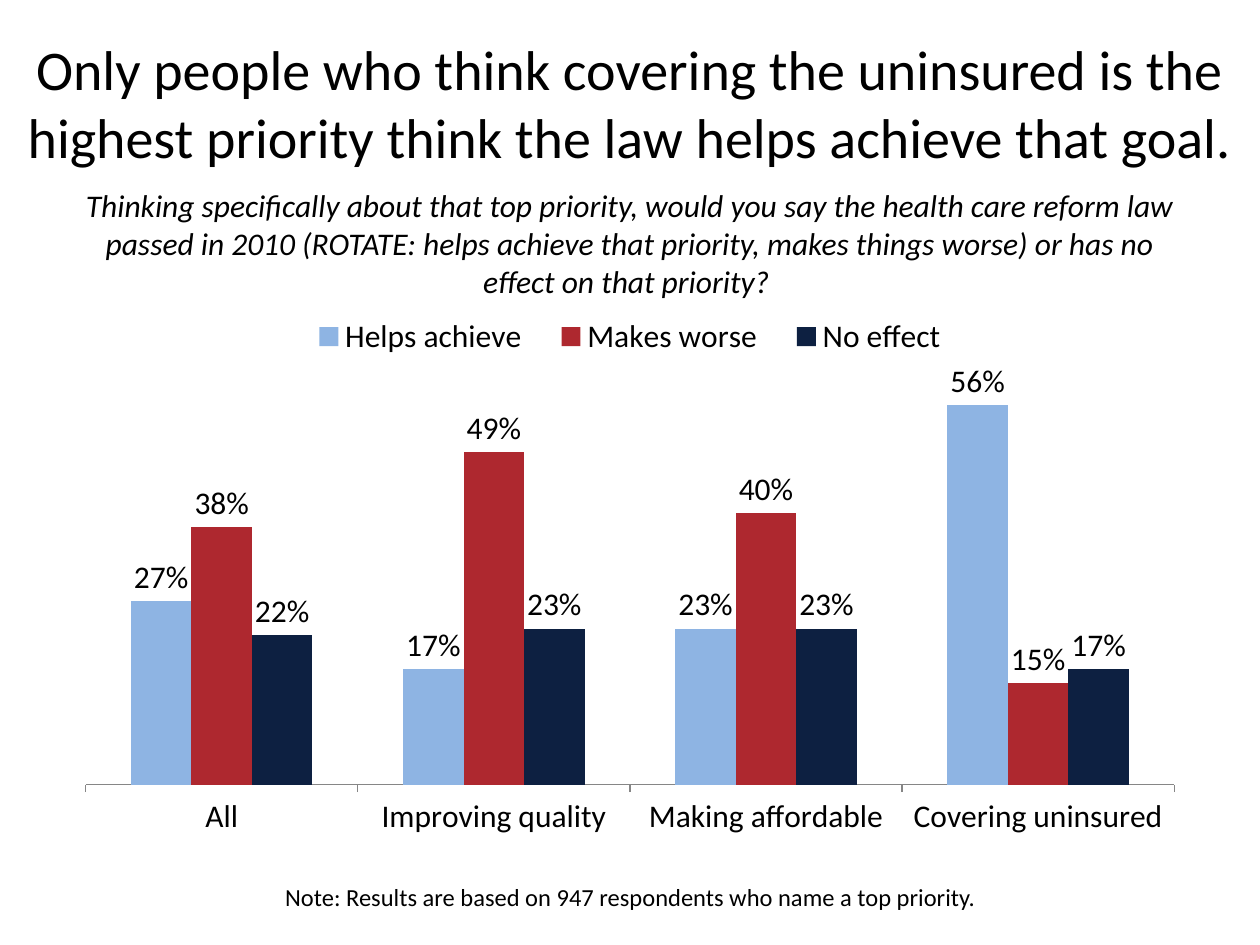
from dataclasses import dataclass

from lxml.etree import SubElement
from pptx import Presentation
from pptx.chart.data import CategoryChartData
from pptx.dml.color import RGBColor
from pptx.enum.chart import XL_CHART_TYPE as ChartType
from pptx.enum.chart import XL_LABEL_POSITION as LabelPosition
from pptx.enum.chart import XL_LEGEND_POSITION as LegendPosition
from pptx.enum.chart import XL_TICK_LABEL_POSITION as TickLabelPosition
from pptx.enum.chart import XL_TICK_MARK as TickMark
from pptx.enum.text import MSO_ANCHOR as Anchor
from pptx.enum.text import PP_ALIGN as Align
from pptx.oxml.ns import qn
from pptx.util import Inches, Pt

FONT = "Calibri"
BLACK = RGBColor(0x00, 0x00, 0x00)
GRAY = RGBColor(0x86, 0x86, 0x86)
LIGHT_BLUE = RGBColor(0x8E, 0xB4, 0xE3)
RED = RGBColor(0xAE, 0x28, 0x2F)
NAVY = RGBColor(0x0D, 0x20, 0x41)


@dataclass
class Caption:
    text: str
    left: float
    top: float
    width: float
    height: float
    size: int
    italic: bool = False
    wrap: bool = True
    anchor: Anchor = Anchor.TOP


@dataclass
class Answer:
    name: str
    color: RGBColor
    shares: tuple[float, ...]


CAPTIONS = [
    Caption("Thinking specifically about that top priority, would you say the "
            "health care reform law passed in 2010 (ROTATE: helps achieve that "
            "priority, makes things worse) or has no effect on that priority? ",
            0.5, 1.43, 9, 1.01, 18, italic=True),
    Caption("Only people who think covering the uninsured is the highest "
            "priority think the law helps achieve that goal.",
            0, 0, 10, 1.62, 32, anchor=Anchor.MIDDLE),
    Caption("Note: Results are based on 947 respondents who name a top priority.",
            2.15, 6.95, 5.71, 0.34, 14, wrap=False),
]
PRIORITIES = ["All", "Improving quality", "Making affordable", "Covering uninsured"]
ANSWERS = [
    Answer("Helps achieve", LIGHT_BLUE, (0.27, 0.17, 0.23, 0.56)),
    Answer("Makes worse", RED, (0.38, 0.49, 0.40, 0.15)),
    Answer("No effect", NAVY, (0.22, 0.23, 0.23, 0.17)),
]


def add_caption(page, caption: Caption) -> None:
    box = page.shapes.add_textbox(Inches(caption.left), Inches(caption.top),
                                  Inches(caption.width), Inches(caption.height))
    frame = box.text_frame
    frame.word_wrap = caption.wrap
    frame.vertical_anchor = caption.anchor
    para = frame.paragraphs[0]
    para.text = caption.text
    para.alignment = Align.CENTER
    para.font.name = FONT
    para.font.size = Pt(caption.size)
    para.font.italic = caption.italic
    para.font.color.rgb = BLACK


def set_layout(parent, index: int, x: float, y: float, w: float, h: float,
               inner: bool = False) -> None:
    for old in parent.findall(qn("c:layout")):
        parent.remove(old)
    layout = SubElement(parent, qn("c:layout"))
    parent.insert(index, layout)
    manual = SubElement(layout, qn("c:manualLayout"))
    settings = [("layoutTarget", "inner")] if inner else []
    settings += [("xMode", "edge"), ("yMode", "edge"),
                 ("x", x), ("y", y), ("w", w), ("h", h)]
    for tag, value in settings:
        SubElement(manual, qn(f"c:{tag}")).set("val", str(value))


def add_priority_chart(page, priorities: list[str], answers: list[Answer]) -> None:
    data = CategoryChartData(number_format="0%")
    data.categories = priorities
    for answer in answers:
        data.add_series(answer.name, answer.shares)
    chart = page.shapes.add_chart(ChartType.COLUMN_CLUSTERED, Inches(0.5), Inches(2.11),
                                  Inches(9), Inches(4.68), data).chart
    chart.has_title = False
    chart.font.name = FONT
    chart.font.size = Pt(18)
    chart.font.color.rgb = BLACK

    chart.has_legend = True
    chart.legend.position = LegendPosition.TOP
    chart.legend.include_in_layout = False

    priority_axis = chart.category_axis
    priority_axis.major_tick_mark = TickMark.OUTSIDE
    priority_axis.tick_label_position = TickLabelPosition.LOW
    priority_axis.format.line.color.rgb = GRAY
    share_axis = chart.value_axis
    share_axis.minimum_scale = 0
    share_axis.maximum_scale = 0.6
    share_axis.has_major_gridlines = False
    share_axis.visible = False

    plot = chart.plots[0]
    plot.gap_width = 150
    plot.overlap = 0
    plot.vary_by_categories = False
    plot.has_data_labels = True
    labels = plot.data_labels
    labels.show_value = True
    labels.number_format = "0%"
    labels.number_format_is_linked = False
    labels.position = LabelPosition.OUTSIDE_END
    for series, answer in zip(plot.series, answers):
        series.format.fill.solid()
        series.format.fill.fore_color.rgb = answer.color

    plot_area = chart.element.find(".//" + qn("c:plotArea"))
    set_layout(plot_area, 0, 0.02, 0.19, 0.96, 0.69, inner=True)
    legend = chart.element.find(".//" + qn("c:legend"))
    set_layout(legend, 1, 0.2, 0.08, 0.6, 0.08)


def main() -> None:
    deck = Presentation()
    deck.slide_width = Inches(10)
    deck.slide_height = Inches(7.5)
    page = deck.slides.add_slide(deck.slide_layouts[6])
    add_priority_chart(page, PRIORITIES, ANSWERS)
    for caption in CAPTIONS:
        add_caption(page, caption)
    deck.save("out.pptx")


if __name__ == "__main__":
    main()
